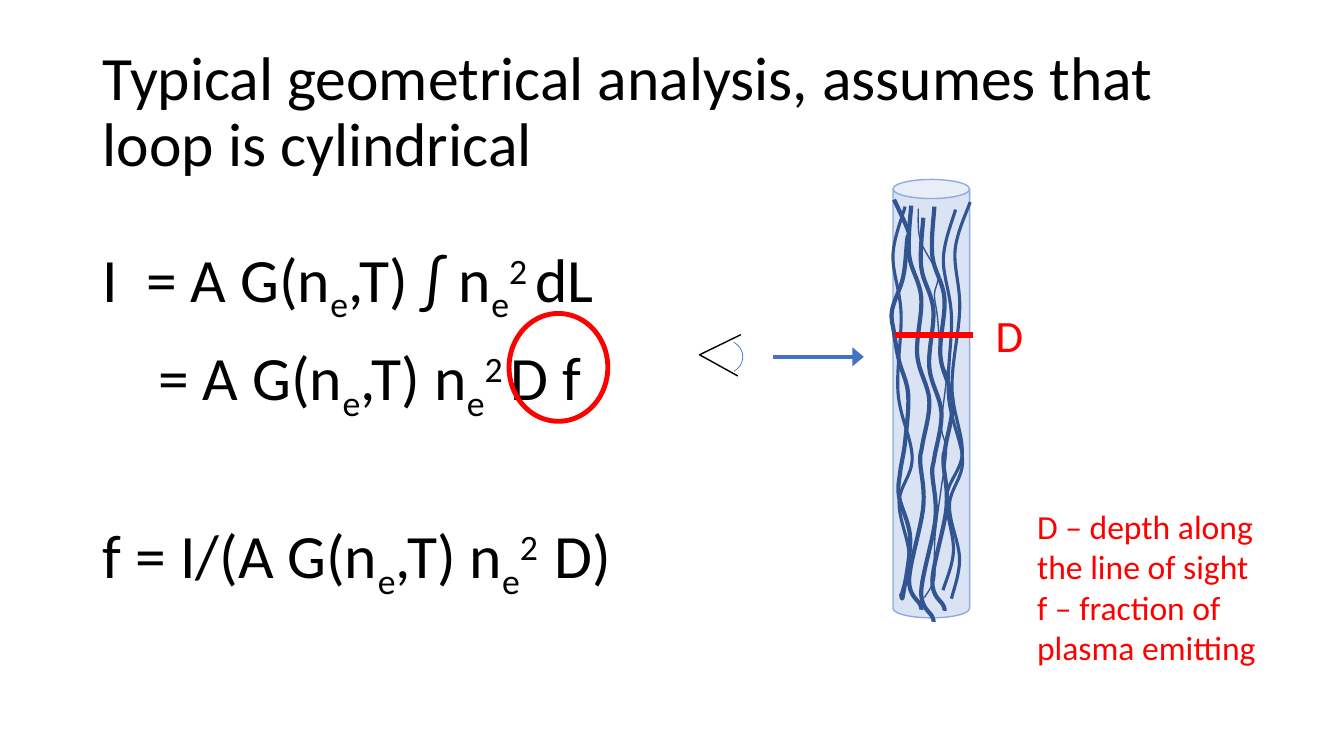
from math import cos, radians, sin

from pptx import Presentation
from pptx.dml.color import RGBColor
from pptx.enum.shapes import MSO_CONNECTOR, MSO_SHAPE
from pptx.enum.text import MSO_ANCHOR, PP_ALIGN
from pptx.oxml.ns import qn
from pptx.util import Inches, Pt
from lxml import etree

STRAIGHT = MSO_CONNECTOR.STRAIGHT
CAN, ARC, ELLIPSE = MSO_SHAPE.CAN, MSO_SHAPE.ARC, MSO_SHAPE.OVAL
LEFT = PP_ALIGN.LEFT
MIDDLE, TOP = MSO_ANCHOR.MIDDLE, MSO_ANCHOR.TOP

BLACK = RGBColor(0x00, 0x00, 0x00)
RED = RGBColor(0xFF, 0x00, 0x00)
BLUE = RGBColor(0x44, 0x72, 0xC4)
STRAND_BLUE = RGBColor(0x32, 0x54, 0x91)
TUBE_FILL = RGBColor(0xDA, 0xE3, 0xF3)
TUBE_EDGE = RGBColor(0x8F, 0xAA, 0xDC)
FONT = "Calibri"

# Baseline shift of the text after each mark in a formula
SHIFTS = {"_": "-25000", "^": "30000", "|": None}

# Strands lie in frames turned by this angle
STRAND_TURN = 42.5
# Strand knots, in inches from the top left of the loop
THICK_STRAND = [(.18, .26), (.16, .75), (.28, 1.17), (.24, 1.74), (.36, 2.19), (.29, 2.64),
                (.27, 2.8), (.3, 3.25), (.16, 3.97), (.27, 4.22), (.28, 4.27)]
SLIM_STRAND = [(.08, 4.13), (.16, 3.73), (.06, 3.2), (.19, 2.76), (.05, 2.12), (.08, 1.33),
               (0, .75), (.12, .27)]
LEFT_STRAND = [(.01, .2), (.15, .51), (.14, .6), (.1, .97), (-.01, 1.3), (.01, 1.52),
               (.06, 1.8), (.15, 2.13), (.12, 2.6), (.07, 2.91), (.06, 3.15), (.17, 3.56),
               (.1, 4.12), (.08, 4.11)]
FINE_STRAND = [(.25, .29), (.27, .6), (.44, .94), (.41, 1.14), (.44, 1.36), (.48, 1.82),
               (.53, 1.95), (.48, 2.44), (.53, 2.69), (.48, 3.05), (.42, 3.5), (.41, 3.77),
               (.41, 3.97), (.31, 4.15)]
# knots, shift right, shift down, lean in degrees, line width
STRANDS = [
    (FINE_STRAND, 0, 0, 0, 1),
    (THICK_STRAND, 0, 0, 0, 3),
    (THICK_STRAND, .23, .01, 0, 3),
    (THICK_STRAND, .12, .12, 0, 3),
    (SLIM_STRAND, 0, 0, 0, 2.25),
    (SLIM_STRAND, .5, .03, 0, 2.25),
    (SLIM_STRAND, .53, -.05, 3.4, 2.25),
    (LEFT_STRAND, 0, 0, 0, 3),
]


def place(shape, left, top, width, height):
    shape.left, shape.top = Inches(left), Inches(top)
    shape.width, shape.height = Inches(width), Inches(height)


def set_font(paragraph, size, color):
    paragraph.font.name, paragraph.font.size = FONT, Pt(size)
    paragraph.font.color.rgb = color


def style_outline(shape, color, width):
    shape.shadow.inherit = False
    shape.fill.background()
    shape.line.color.rgb, shape.line.width = color, Pt(width)


def add_preset(slide, kind, box, color, width):
    shape = slide.shapes.add_shape(kind, *map(Inches, box))
    style_outline(shape, color, width)
    return shape


def add_open_line(slide, points, color, width):
    emu = [(Inches(x), Inches(y)) for x, y in points]
    builder = slide.shapes.build_freeform(*emu[0])
    builder.add_line_segments(emu[1:], close=False)
    shape = builder.convert_to_shape()
    style_outline(shape, color, width)
    return shape


def add_straight(slide, start, end, color, width):
    line = slide.shapes.add_connector(STRAIGHT, *map(Inches, start + end))
    line.line.color.rgb, line.line.width = color, Pt(width)
    etree.SubElement(line._element.spPr, qn("a:effectLst"))
    return line


def turn(point, degrees):
    (x, y), angle = point, radians(degrees)
    return x * cos(angle) - y * sin(angle), x * sin(angle) + y * cos(angle)


def bezier_points(knots):
    """First knot, then two handles and a knot for each smooth segment."""
    padded = [knots[0], *knots, knots[-1]]
    points = [knots[0]]
    for a, b, c, d in zip(padded, padded[1:], padded[2:], padded[3:]):
        points.append(tuple(q + (r - p) / 6 for p, q, r in zip(a, b, c)))
        points.append(tuple(r - (s - q) / 6 for q, r, s in zip(b, c, d)))
        points.append(c)
    return points


def add_strand(slide, knots, lean, width):
    points = [turn(point, STRAND_TURN) for point in bezier_points(knots)]
    strand = add_open_line(slide, points, STRAND_BLUE, width)
    # Each three line ends become one curve
    segments = list(strand._element.iter(qn("a:lnTo")))
    for trio in zip(segments[::3], segments[1::3], segments[2::3]):
        curve = etree.Element(qn("a:cubicBezTo"))
        trio[0].addprevious(curve)
        for segment in trio:
            curve.append(segment[0])
            segment.getparent().remove(segment)
    # Turn the frame back about its own centre
    center = strand.left + strand.width / 2, strand.top + strand.height / 2
    x, y = turn(center, -STRAND_TURN)
    strand.left, strand.top = int(x - strand.width / 2), int(y - strand.height / 2)
    strand.rotation = lean - STRAND_TURN


def add_title(slide, left, top, width, height):
    title = slide.shapes.title
    place(title, left, top, width, height)
    title.text_frame.text = "Typical geometrical analysis, assumes that loop is cylindrical"
    title.text_frame.vertical_anchor = MIDDLE
    paragraph = title.text_frame.paragraphs[0]
    paragraph.alignment, paragraph.line_spacing = LEFT, 0.9
    set_font(paragraph, 44, BLACK)


def write_formula(paragraph, formula):
    text, shift = "", None
    for char in formula + "|":
        if char not in SHIFTS:
            text += char
            continue
        if text:
            run = paragraph.add_run()
            run.text = text
            if shift:
                run.font._element.set("baseline", shift)
        text, shift = "", SHIFTS[char]


def add_formulas(slide, left, top, width, height):
    body = slide.placeholders[1]
    place(body, left, top, width, height)
    frame = body.text_frame
    frame.vertical_anchor = TOP
    # formula, indent, space before, line spacing
    formulas = [
        ("I  = A G(n_e|,T) ∫ n_e^2 |dL", 0, 10, 1.0),
        ("= A G(n_e|,T) n_e^2 |D f", 0.55, 10, 1.0),
        ("f = I/(A G(n_e|,T) n_e^2  |D)", 0, 68, 0.9),
    ]
    for index, (formula, indent, before, spacing) in enumerate(formulas):
        paragraph = frame.add_paragraph() if index else frame.paragraphs[0]
        paragraph.space_before, paragraph.line_spacing = Pt(before), spacing
        set_font(paragraph, 44, BLACK)
        write_formula(paragraph, formula)
        properties = paragraph._p.get_or_add_pPr()
        properties.set("marL", str(Inches(indent)))
        properties.set("indent", "0")
        properties.insert_element_before(
            properties.makeelement(qn("a:buNone"), {}), "a:tabLst", "a:defRPr", "a:extLst")


def add_loop(slide, left, top, width, height):
    tube = add_preset(slide, CAN, (left, top, width, height), TUBE_EDGE, 1)
    tube.fill.solid()
    tube.fill.fore_color.rgb = TUBE_FILL
    for knots, right, down, lean, line_width in STRANDS:
        moved = [(left + x + right, top + y + down) for x, y in knots]
        add_strand(slide, moved, lean, line_width)


def add_observer(slide, left, top):
    # Eye
    lids = [(left + .41, top), (left, top + .2), (left + .38, top + .41)]
    add_open_line(slide, lids, BLACK, 1)
    pupil = add_preset(slide, ARC, (left + .05, top + .05, .38, .34), BLUE, 0.5)
    # Adjustments count 100000ths, arc angles 60000ths of a degree
    pupil.adjustments[0], pupil.adjustments[1] = 305 * 0.6, 55 * 0.6
    # Line of sight
    sight = add_straight(slide, (left + .73, top + .22), (left + 1.63, top + .22), BLUE, 2.75)
    etree.SubElement(sight.line._get_or_add_ln(), qn("a:tailEnd"), type="triangle", w="lg")


def add_note(slide, lines, box, size, wrap):
    frame = slide.shapes.add_textbox(*map(Inches, box)).text_frame
    frame.word_wrap = wrap
    for index, line in enumerate(lines):
        paragraph = frame.add_paragraph() if index else frame.paragraphs[0]
        paragraph.text = line
        set_font(paragraph, size, RED)


def add_depth_marks(slide, left, top):
    add_straight(slide, (left + .77, top), (left, top), RED, 4.25)
    add_note(slide, ["D"], (left + .9, top - .32, .48, .64), 32, False)
    # Ring around D f in the second formula
    add_preset(slide, ELLIPSE, (5.05, 3.11, .98, 1.07), RED, 3.5)
    legend = ["D – depth along", "the line of sight", "f – fraction of plasma emitting"]
    add_note(slide, legend, (left + 1.31, top + 1.65, 2.75, 1.72), 24, True)


def main():
    deck = Presentation()
    deck.slide_width, deck.slide_height = Inches(40 / 3), Inches(7.5)
    slide = deck.slides.add_slide(deck.slide_layouts[1])
    add_title(slide, 0.92, 0.4, 11.5, 1.45)
    add_formulas(slide, 0.92, 2.34, 5.96, 4.76)
    add_loop(slide, 8.86, 1.78, 0.76, 4.35)
    add_observer(slide, 6.94, 3.32)
    add_depth_marks(slide, 8.88, 3.32)
    deck.save("out.pptx")


if __name__ == "__main__":
    main()
